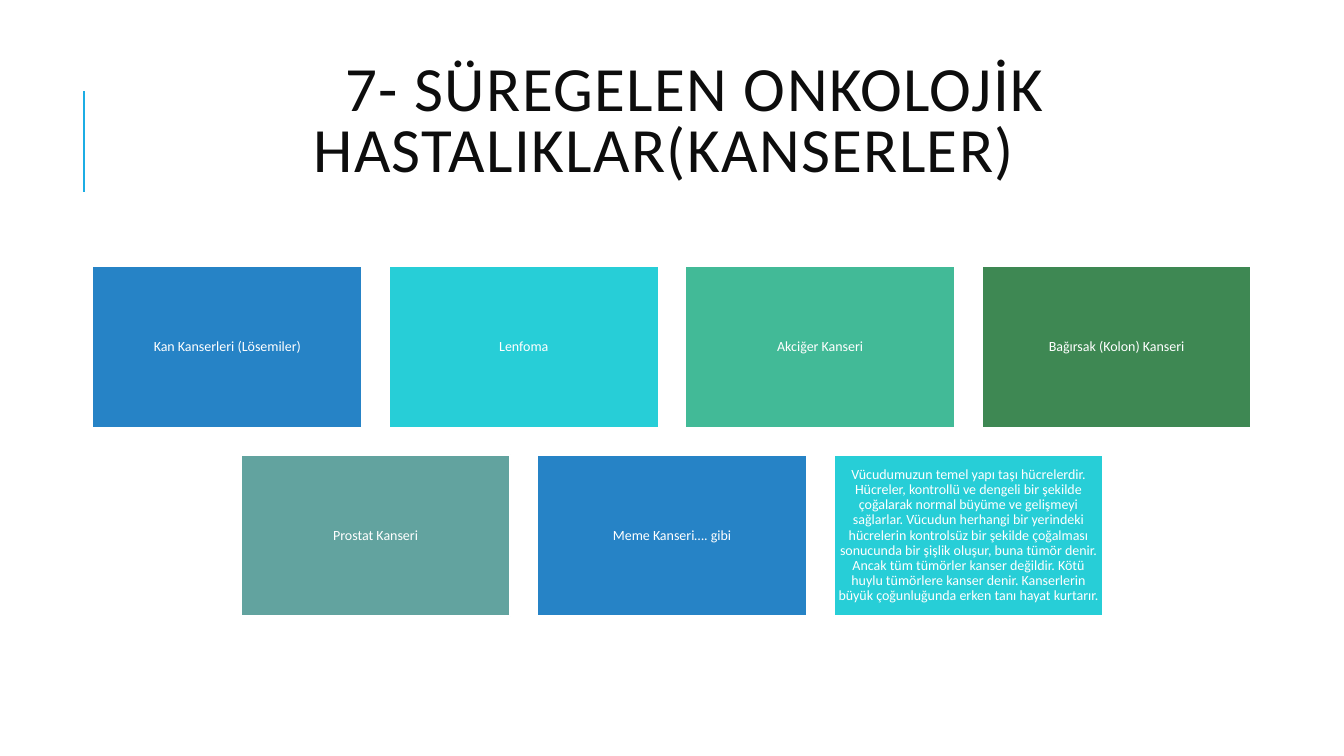
from lxml.etree import SubElement
from pptx import Presentation
from pptx.dml.color import RGBColor
from pptx.enum.shapes import MSO_CONNECTOR as Connector, MSO_SHAPE as Shape
from pptx.enum.text import MSO_ANCHOR as Anchor, PP_ALIGN as Align
from pptx.oxml.ns import qn
from pptx.util import Cm, Pt

COLORS = {
    "accent": "1CADE4", "title": "0D0D0D", "white": "FFFFFF",
    "blue": "2683C6", "cyan": "27CED7", "mint": "42BA97",
    "green": "3E8853", "teal": "62A39F",
}
SLIDE_WIDTH, SLIDE_HEIGHT = 33.87, 19.05
CARD_WIDTH, CARD_HEIGHT, GAP, CARDS_TOP = 6.79, 4.07, 0.68, 6.71

CARD_ROWS = [
    [("Kan Kanserleri (Lösemiler)", "blue"), ("Lenfoma", "cyan"),
     ("Akciğer Kanseri", "mint"), ("Bağırsak (Kolon) Kanseri", "green")],
    [("Prostat Kanseri", "teal"), ("Meme Kanseri…. gibi", "blue"),
     ("Vücudumuzun temel yapı taşı hücrelerdir. Hücreler, kontrollü ve dengeli "
      "bir şekilde çoğalarak normal büyüme ve gelişmeyi sağlarlar. Vücudun herhangi "
      "bir yerindeki hücrelerin kontrolsüz bir şekilde çoğalması sonucunda bir şişlik "
      "oluşur, buna tümör denir. Ancak tüm tümörler kanser değildir. Kötü huylu "
      "tümörlere kanser denir. Kanserlerin büyük çoğunluğunda erken tanı hayat "
      "kurtarır.", "cyan")],
]


def apply(target, formats):
    for name, value in formats.items():
        setattr(target, name, value)


class SlideBuilder:
    font_name = "Calibri"

    def __init__(self, slide):
        self.slide = slide

    def color(self, name):
        return RGBColor.from_string(COLORS[name])

    def add_text(self, shape, text, size, color, spacing, inset):
        """Fill a shape with one centred paragraph."""
        frame = shape.text_frame
        margins = dict(zip(("margin_left", "margin_top", "margin_right", "margin_bottom"),
                           map(Cm, inset)))
        apply(frame, {"word_wrap": True, "vertical_anchor": Anchor.MIDDLE, **margins})
        paragraph = frame.paragraphs[0]
        apply(paragraph, {"alignment": Align.CENTER, "line_spacing": spacing})
        run = paragraph.add_run()
        run.text = text
        apply(run.font, {"name": self.font_name, "size": Pt(size)})
        run.font.color.rgb = self.color(color)
        return paragraph

    def title(self, text, left, top, width, height):
        box = self.slide.shapes.add_textbox(Cm(left), Cm(top), Cm(width), Cm(height))
        paragraph = self.add_text(box, text, 45, "title", 0.8, (0.25, 0.13, 0.25, 0.13))
        # First-line indent and letter spacing
        paragraph._p.get_or_add_pPr().set("indent", str(Cm(1.18)))
        paragraph.runs[0].font._element.set("spc", "100")

    def line(self, x, top, bottom, color):
        connector = self.slide.shapes.add_connector(
            Connector.STRAIGHT, Cm(x), Cm(bottom), Cm(x), Cm(top))
        connector.line.color.rgb = self.color(color)
        connector.line.width = Pt(1.5)
        SubElement(connector._element.spPr, qn("a:effectLst"))

    def card(self, text, fill, left, top):
        shape = self.slide.shapes.add_shape(
            Shape.RECTANGLE, Cm(left), Cm(top), Cm(CARD_WIDTH), Cm(CARD_HEIGHT))
        shape.shadow.inherit = False
        shape.fill.solid()
        shape.fill.fore_color.rgb = self.color(fill)
        shape.line.color.rgb = self.color("white")
        shape.line.width = Pt(1.25)
        self.add_text(shape, text, 10, "white", 0.9, (0.1,) * 4)


def main():
    presentation = Presentation()
    apply(presentation, {"slide_width": Cm(SLIDE_WIDTH), "slide_height": Cm(SLIDE_HEIGHT)})
    builder = SlideBuilder(presentation.slides.add_slide(presentation.slide_layouts[6]))

    # Heading with its accent line
    builder.line(2.11, 2.29, 4.83, "accent")
    builder.title("7- SÜREGELEN ONKOLOJİK HASTALIKLAR(KANSERLER) ", 2.33, 1.55, 29.21, 3.15)

    # Card rows, each centred on the slide
    for row, cards in enumerate(CARD_ROWS):
        row_width = len(cards) * (CARD_WIDTH + GAP) - GAP
        left = (SLIDE_WIDTH - row_width) / 2
        top = CARDS_TOP + row * (CARD_HEIGHT + GAP)
        for column, (text, fill) in enumerate(cards):
            builder.card(text, fill, left + column * (CARD_WIDTH + GAP), top)

    presentation.save("out.pptx")


if __name__ == "__main__":
    main()
